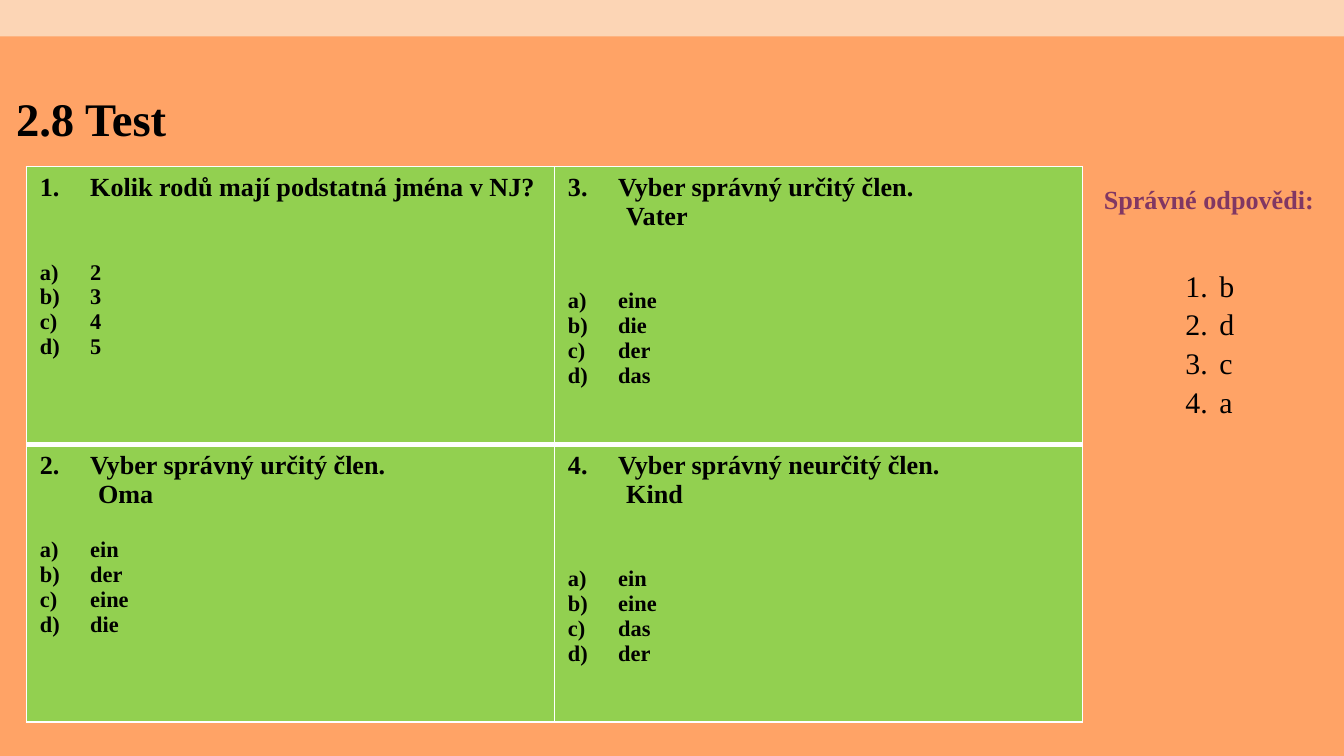
from dataclasses import dataclass
from typing import NamedTuple

from lxml.etree import SubElement as Sub
from pptx import Presentation
from pptx.dml.color import RGBColor as Rgb
from pptx.enum.shapes import MSO_SHAPE as Kind
from pptx.enum.text import MSO_ANCHOR as Anchor, MSO_AUTO_SIZE as Fit, PP_ALIGN as Align
from pptx.oxml.ns import qn
from pptx.util import Cm, Pt


@dataclass(frozen=True)
class Theme:
    font: str = "Times New Roman"
    back: str = "FFA366"
    band: str = "FCD5B5"
    cell: str = "92D050"
    line: str = "FFFFFF"
    ink: str = "000000"
    plum: str = "813763"
    title: int = 25
    answer: int = 16
    ask: int = 14
    option: int = 12


class Box(NamedTuple):
    left: float
    top: float
    width: float
    height: float

    def cm(self) -> list:
        return [Cm(v) for v in self]


@dataclass(frozen=True)
class Quiz:
    ask: str
    options: tuple
    word: str = ""
    gap: float = 31


LOOK = Theme()
INDENT = 0.95
TESTS = (
    Quiz("Kolik rodů mají podstatná jména v NJ?", ("2", "3", "4", "5")),
    Quiz("Vyber správný určitý člen.", ("ein", "der", "eine", "die"), "Oma", 15.5),
    Quiz("Vyber správný určitý člen.", ("eine", "die", "der", "das"), "Vater"),
    Quiz("Vyber správný neurčitý člen.", ("ein", "eine", "das", "der"), "Kind"),
)


def paint(fill, tint: str) -> None:
    fill.solid()
    fill.fore_color.rgb = Rgb.from_string(tint)


def place(shape, box: Box) -> None:
    for name, value in zip(("left", "top", "width", "height"), box.cm()):
        setattr(shape, name, value)


def write(para, text: str, size: int, bold: bool = True, tint: str = LOOK.ink) -> None:
    run = para.add_run()
    run.text = text
    for name, value in {"name": LOOK.font, "size": Pt(size), "bold": bold}.items():
        setattr(run.font, name, value)
    run.font.color.rgb = Rgb.from_string(tint)


def number(para, style: str, indent: float, start: int = 1) -> None:
    """Give the paragraph a hanging automatic number."""
    props = para._p.get_or_add_pPr()
    props.set("marL", str(Cm(indent)))
    props.set("indent", str(-Cm(indent)))
    mark = Sub(props, qn("a:buAutoNum"), type=style)
    if start > 1:
        mark.set("startAt", str(start))


def border(cell, side: str, width: float) -> None:
    line = Sub(cell._tc.get_or_add_tcPr(), qn(f"a:ln{side}"), w=str(Pt(width)))
    Sub(Sub(line, qn("a:solidFill")), qn("a:srgbClr"), val=LOOK.line)


def fill_cell(cell, quiz: Quiz, index: int, row: int) -> None:
    thick = {"T": 3 if row else 1, "B": 1 if row else 3}
    for side in "LRTB":
        border(cell, side, thick.get(side, 1))
    paint(cell.fill, LOOK.cell)
    frame = cell.text_frame
    para = frame.paragraphs[0]
    number(para, "arabicPeriod", INDENT, index)
    write(para, quiz.ask, LOOK.ask)
    if quiz.word:
        para = frame.add_paragraph()
        para._p.get_or_add_pPr().set("marL", str(Cm(1.1)))
        write(para, quiz.word, LOOK.ask)
    for pos, option in enumerate(quiz.options):
        para = frame.add_paragraph()
        para.space_before = Pt(0 if pos else quiz.gap)
        number(para, "alphaLcParenR", INDENT)
        write(para, option, LOOK.option)


def add_title(shape) -> None:
    place(shape, Box(0.05, 1.4, 8.1, 1.65))
    frame = shape.text_frame
    frame.vertical_anchor = Anchor.MIDDLE
    frame.paragraphs[0].alignment = Align.LEFT
    write(frame.paragraphs[0], "2.8 Test", LOOK.title)


def add_tests(slide) -> None:
    box = Box(0.5, 3.15, 19.96, 10.5)
    table = slide.shapes.add_table(2, 2, *box.cm()).table
    for index, quiz in enumerate(TESTS):
        col, row = divmod(index, 2)
        fill_cell(table.cell(row, col), quiz, index + 1, row)


def add_key(slide, body) -> None:
    """Add the heading and list of the right answers."""
    head = slide.shapes.add_textbox(*Box(20.45, 3.35, 4.8, 0.86).cm()).text_frame
    head.word_wrap = True
    head.paragraphs[0].alignment = Align.CENTER
    write(head.paragraphs[0], "Správné odpovědi:", LOOK.ask, tint=LOOK.plum)

    place(body, Box(22.15, 4.2, 1.4, 5.05))
    frame = body.text_frame
    form = {"auto_size": Fit.NONE, "vertical_anchor": Anchor.TOP, "margin_top": Cm(0.8)}
    for name, value in form.items():
        setattr(frame, name, value)
    for pos, letter in enumerate("bdca"):
        para = frame.add_paragraph() if pos else frame.paragraphs[0]
        para.line_spacing = 1.08
        para.space_before = Pt(0)
        number(para, "arabicPeriod", 0.64)
        write(para, letter, LOOK.answer, bold=False)


def add_band(slide) -> None:
    band = slide.shapes.add_shape(Kind.RECTANGLE, *Box(0, 0, 25.4, 0.69).cm())
    band.shadow.inherit = False
    paint(band.fill, LOOK.band)
    band.line.fill.background()


def main() -> None:
    deck = Presentation()
    deck.slide_width, deck.slide_height = Cm(25.4), Cm(14.29)
    slide = deck.slides.add_slide(deck.slide_layouts[1])
    paint(slide.background.fill, LOOK.back)
    title, body = slide.placeholders
    add_title(title)
    add_tests(slide)
    add_key(slide, body)
    add_band(slide)
    deck.save("out.pptx")


if __name__ == "__main__":
    main()
